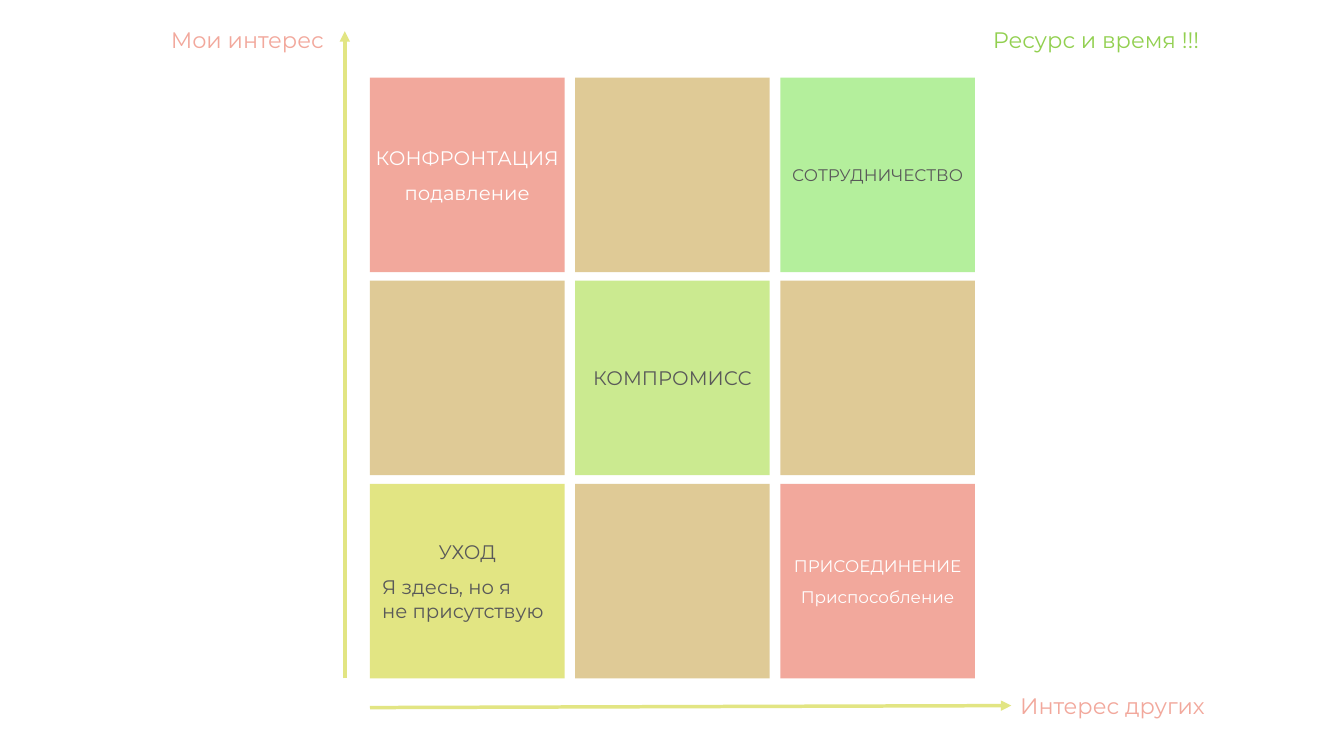
from lxml import etree
from pptx import Presentation
from pptx.dml.color import RGBColor
from pptx.enum.shapes import MSO_CONNECTOR, MSO_SHAPE
from pptx.enum.text import MSO_ANCHOR, PP_ALIGN
from pptx.oxml.ns import qn
from pptx.util import Inches, Pt

RECTANGLE = MSO_SHAPE.RECTANGLE
STRAIGHT = MSO_CONNECTOR.STRAIGHT
MIDDLE = MSO_ANCHOR.MIDDLE
LEFT, CENTER, RIGHT = PP_ALIGN.LEFT, PP_ALIGN.CENTER, PP_ALIGN.RIGHT

CORAL = RGBColor(0xF2, 0xA8, 0x9C)
SAND = RGBColor(0xDF, 0xCA, 0x96)
MINT = RGBColor(0xB4, 0xEF, 0x9C)
LIME = RGBColor(0xCB, 0xEA, 0x90)
YELLOW = RGBColor(0xE2, 0xE5, 0x83)
GREEN = RGBColor(0x92, 0xD0, 0x50)
GRAY = RGBColor(0x59, 0x59, 0x59)
WHITE = RGBColor(0xFF, 0xFF, 0xFF)
FONT = "Montserrat"

EMPTY = (SAND, GRAY, 14, [])
STRATEGIES = [
    [
        (CORAL, WHITE, 14, [("КОНФРОНТАЦИЯ", CENTER), ("подавление", CENTER)]),
        EMPTY,
        (MINT, GRAY, 12, [("СОТРУДНИЧЕСТВО", CENTER)]),
    ],
    [EMPTY, (LIME, GRAY, 14, [("КОМПРОМИСС", CENTER)]), EMPTY],
    [
        (YELLOW, GRAY, 14, [("УХОД", CENTER), ("Я здесь, но я\nне присутствую", LEFT)]),
        EMPTY,
        (CORAL, WHITE, 12, [("ПРИСОЕДИНЕНИЕ", CENTER), ("Приспособление", CENTER)]),
    ],
]
ROW_INSETS = [0, 0, 0.12]
AXES = [((3.42, 6.73), (3.42, 0.31)), ((3.67, 7.02), (10.03, 7))]
LABELS = [
    ("Мои интерес", 0, 0.09, RIGHT, CORAL),
    ("Интерес других", 10.02, 6.7, LEFT, CORAL),
    ("Ресурс и время !!!", 9.75, 0.09, LEFT, GREEN),
]

GRID_LEFT, GRID_TOP = 3.67, 0.77
GRID_WIDTH, GRID_HEIGHT = 6, 5.96
CELL = 1.93
COLUMN_STEP = (GRID_WIDTH - CELL) / 2
ROW_STEP = (GRID_HEIGHT - CELL) / 2


def write_text(frame, paragraphs, size, color):
    frame.word_wrap = True
    frame.vertical_anchor = MIDDLE
    for index, (text, alignment) in enumerate(paragraphs):
        paragraph = frame.paragraphs[0] if index == 0 else frame.add_paragraph()
        paragraph.alignment = alignment
        if index < len(paragraphs) - 1:
            paragraph.space_after = Pt(8)
        for number, line in enumerate(text.split("\n")):
            if number:
                paragraph.add_line_break()
            run = paragraph.add_run()
            run.text = line
            run.font.name = FONT
            run.font.size = Pt(size)
            run.font.color.rgb = color


def add_cell(slide, row, column, strategy):
    fill, color, size, paragraphs = strategy
    shape = slide.shapes.add_shape(
        RECTANGLE,
        Inches(GRID_LEFT + column * COLUMN_STEP),
        Inches(GRID_TOP + row * ROW_STEP),
        Inches(CELL),
        Inches(CELL),
    )
    shape.shadow.inherit = False
    shape.fill.solid()
    shape.fill.fore_color.rgb = fill
    shape.line.fill.background()
    frame = shape.text_frame
    frame.margin_left = frame.margin_right = Inches(ROW_INSETS[row])
    frame.margin_top = frame.margin_bottom = 0
    write_text(frame, paragraphs, size, color)


def add_axis(slide, start, end):
    points = [Inches(value) for value in start + end]
    connector = slide.shapes.add_connector(STRAIGHT, *points)
    connector.line.color.rgb = YELLOW
    connector.line.width = Pt(2.5)
    etree.SubElement(connector.line._get_or_add_ln(), qn("a:tailEnd"), type="triangle")
    etree.SubElement(connector._element.spPr, qn("a:effectLst"))


def add_label(slide, text, left, top, alignment, color):
    box = slide.shapes.add_textbox(Inches(left), Inches(top), Inches(3.31), Inches(0.6))
    write_text(box.text_frame, [(text, alignment)], 16, color)


def main():
    presentation = Presentation()
    presentation.slide_width = Inches(13.33)
    presentation.slide_height = Inches(7.5)
    slide = presentation.slides.add_slide(presentation.slide_layouts[6])
    for row, strategies in enumerate(STRATEGIES):
        for column, strategy in enumerate(strategies):
            add_cell(slide, row, column, strategy)
    for start, end in AXES:
        add_axis(slide, start, end)
    for label in LABELS:
        add_label(slide, *label)
    presentation.save("out.pptx")


if __name__ == "__main__":
    main()
